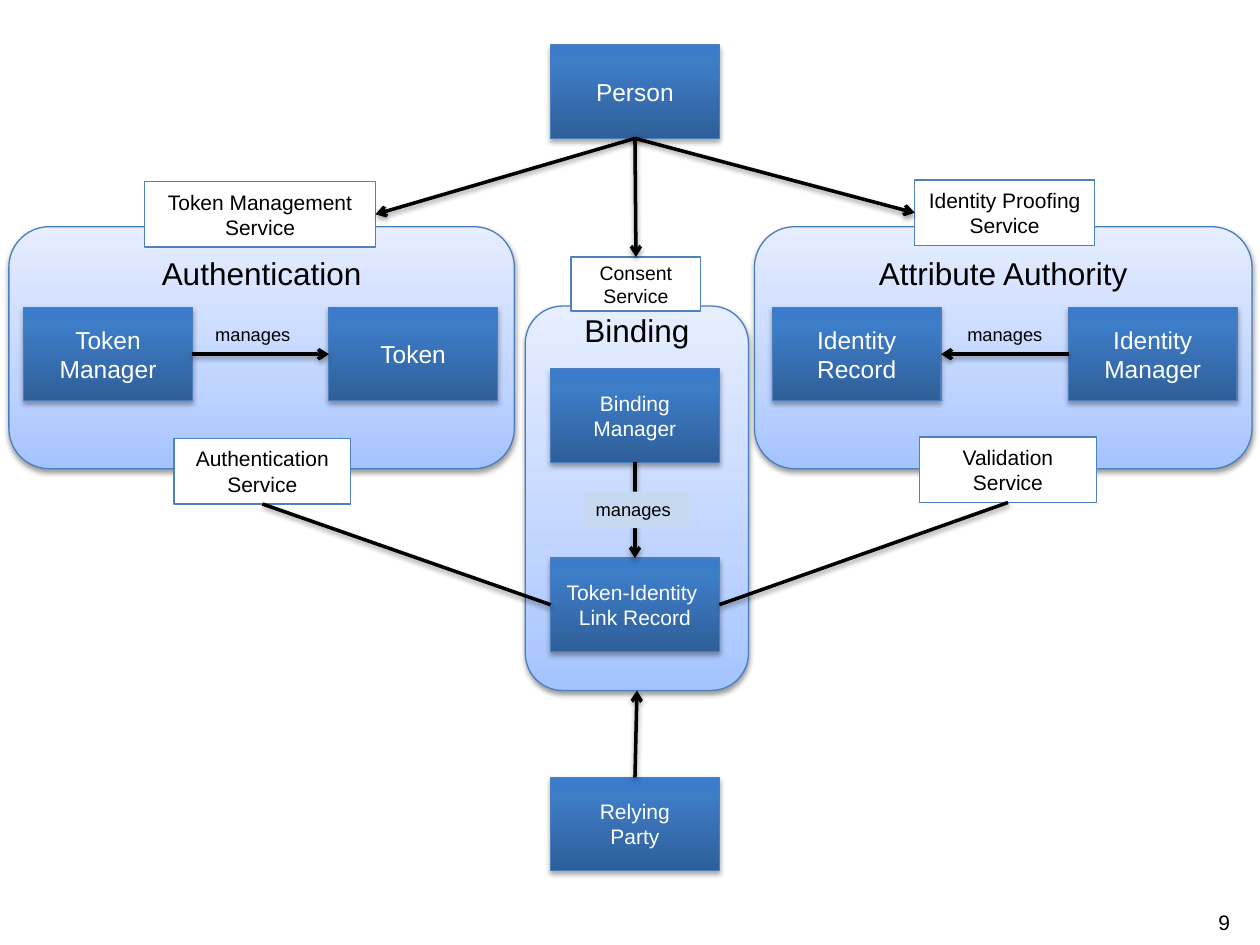
from copy import deepcopy
from lxml.etree import SubElement
from pptx import Presentation
from pptx.dml.color import RGBColor
from pptx.enum.shapes import MSO_CONNECTOR, MSO_SHAPE
from pptx.enum.text import MSO_ANCHOR, PP_ALIGN
from pptx.oxml.ns import qn
from pptx.util import Cm, Pt

BLACK = RGBColor(0x00, 0x00, 0x00)
WHITE = RGBColor(0xFF, 0xFF, 0xFF)
EDGE = RGBColor(0x4B, 0x7E, 0xBC)
SERVICE_EDGE = RGBColor(0x4F, 0x81, 0xBD)
LABEL_FILL = RGBColor(0xC6, 0xD9, 0xF1)
PANEL_STOPS = [(0, RGBColor(0xA4, 0xC4, 0xFF)), (0.35, RGBColor(0xBF, 0xD4, 0xFF)),
               (1, RGBColor(0xE6, 0xEE, 0xFF))]
BLOCK_STOPS = [(0, RGBColor(0x2F, 0x5F, 0x99)), (0.8, RGBColor(0x3D, 0x7C, 0xC7)),
               (1, RGBColor(0x3A, 0x7C, 0xCB))]
TOP, LEFT, BOTTOM, RIGHT = range(4)

prs = Presentation()
prs.slide_width, prs.slide_height = Cm(25.4), Cm(19.05)
s = prs.slides.add_slide(prs.slide_layouts[6])


def add_shadow(spPr, alpha, dist):
    lst = SubElement(spPr, qn("a:effectLst"))
    shdw = SubElement(lst, qn("a:outerShdw"), blurRad=str(Pt(3.1)), dist=str(Pt(dist)),
                      dir="5400000", rotWithShape="0")
    clr = SubElement(shdw, qn("a:srgbClr"), val="000000")
    SubElement(clr, qn("a:alpha"), val=str(alpha * 1000))


def add_box(kind, text, x, y, w, h, size, color, edge, stops=None):
    sp = s.shapes.add_shape(kind, Cm(x), Cm(y), Cm(w), Cm(h))
    sp.line.color.rgb = edge
    sp.line.width = Pt(0.75)
    if stops:
        sp.fill.gradient()
        sp.fill.gradient_angle = 90
        gs = sp.element.spPr.find(".//" + qn("a:gs"))
        gs.addnext(deepcopy(gs))
        for stop, (pos, rgb) in zip(sp.fill.gradient_stops, stops):
            stop.position = pos
            stop.color.rgb = rgb
    else:
        sp.fill.solid()
        sp.fill.fore_color.rgb = WHITE
        sp.shadow.inherit = False
    tf = sp.text_frame
    tf.text = text
    tf.vertical_anchor = MSO_ANCHOR.MIDDLE
    for p in tf.paragraphs:
        p.alignment = PP_ALIGN.CENTER
        f = p.runs[0].font
        f.name, f.size, f.color.rgb = "Arial", Pt(size), color
    return sp


shapes = {}
for name, x, y, w, h, inset in [
    ("Binding", 10.59, 6.17, 4.5, 7.75, -0.12),
    ("Attribute Authority", 15.21, 4.57, 10.03, 4.88, 0.32),
    ("Authentication", 0.18, 4.57, 10.19, 4.88, 0.32),
]:
    sp = add_box(MSO_SHAPE.ROUNDED_RECTANGLE, name, x, y, w, h, 18, BLACK, EDGE, PANEL_STOPS)
    add_shadow(sp.element.spPr, 38, 1.6)
    sp.text_frame.vertical_anchor = MSO_ANCHOR.TOP
    sp.text_frame.margin_top = Cm(inset)
    shapes[name] = sp

for name, text, x, y, size in [
    ("person", "Person", 11.1, 0.91, 14),
    ("relying party", "Relying\nParty", 11.1, 15.67, 12),
    ("binding manager", "Binding\nManager", 11.1, 7.44, 12),
    ("link record", "Token-Identity \nLink Record", 11.1, 11.25, 12),
    ("token manager", "Token\nManager", 0.48, 6.2, 14),
    ("token", "Token", 6.63, 6.2, 14),
    ("identity record", "Identity\nRecord", 15.57, 6.2, 14),
    ("identity manager", "Identity\nManager", 21.54, 6.2, 14),
]:
    sp = add_box(MSO_SHAPE.RECTANGLE, text, x, y, 3.4, 1.88, size, WHITE, EDGE, BLOCK_STOPS)
    add_shadow(sp.element.spPr, 35, 1.8)
    shapes[name] = sp

for name, x, y, w, h, size in [
    ("Validation", 18.54, 8.81, 3.56, 1.32, 12),
    ("Authentication", 3.51, 8.84, 3.56, 1.32, 12),
    ("Consent", 11.51, 5.18, 2.62, 1.09, 11.1),
    ("Token Management", 2.92, 3.66, 4.65, 1.32, 12),
    ("Identity Proofing", 18.44, 3.63, 3.63, 1.32, 12),
]:
    shapes[name + " Service"] = add_box(MSO_SHAPE.RECTANGLE, name + "\nService", x, y, w, h,
                                        size, BLACK, SERVICE_EDGE)

for start, start_side, end, end_side, arrow in [
    ("person", BOTTOM, "Token Management Service", RIGHT, True),
    ("person", BOTTOM, "Consent Service", TOP, True),
    ("person", BOTTOM, "Identity Proofing Service", LEFT, True),
    ("token manager", RIGHT, "token", LEFT, True),
    ("identity manager", LEFT, "identity record", RIGHT, True),
    ("binding manager", BOTTOM, "link record", TOP, True),
    ("relying party", TOP, "Binding", BOTTOM, True),
    ("Authentication Service", BOTTOM, "link record", LEFT, False),
    ("Validation Service", BOTTOM, "link record", RIGHT, False),
]:
    c = s.shapes.add_connector(MSO_CONNECTOR.STRAIGHT, 0, 0, 0, 0)
    c.begin_connect(shapes[start], start_side)
    c.end_connect(shapes[end], end_side)
    c.line.color.rgb = BLACK
    c.line.width = Pt(2)
    if arrow:
        SubElement(c.line._get_or_add_ln(), qn("a:tailEnd"), type="arrow")
    add_shadow(c._element.spPr, 38, 1.6)

for text, x, y, w, h, size, fill in [
    ("manages", 11.76, 9.91, 2.13, 0.74, 10.5, LABEL_FILL),
    ("manages", 4.09, 6.4, 2.13, 0.74, 10.5, None),
    ("manages", 19.25, 6.4, 2.13, 0.74, 10.5, None),
    ("9", 24.31, 18.21, 1.04, 0.76, 12, None),
]:
    tb = s.shapes.add_textbox(Cm(x), Cm(y), Cm(w), Cm(h))
    if fill:
        tb.fill.solid()
        tb.fill.fore_color.rgb = fill
    tf = tb.text_frame
    tf.word_wrap = True
    tf.text = text
    f = tf.paragraphs[0].runs[0].font
    f.name, f.size, f.color.rgb = "Arial", Pt(size), BLACK

prs.save("out.pptx")
